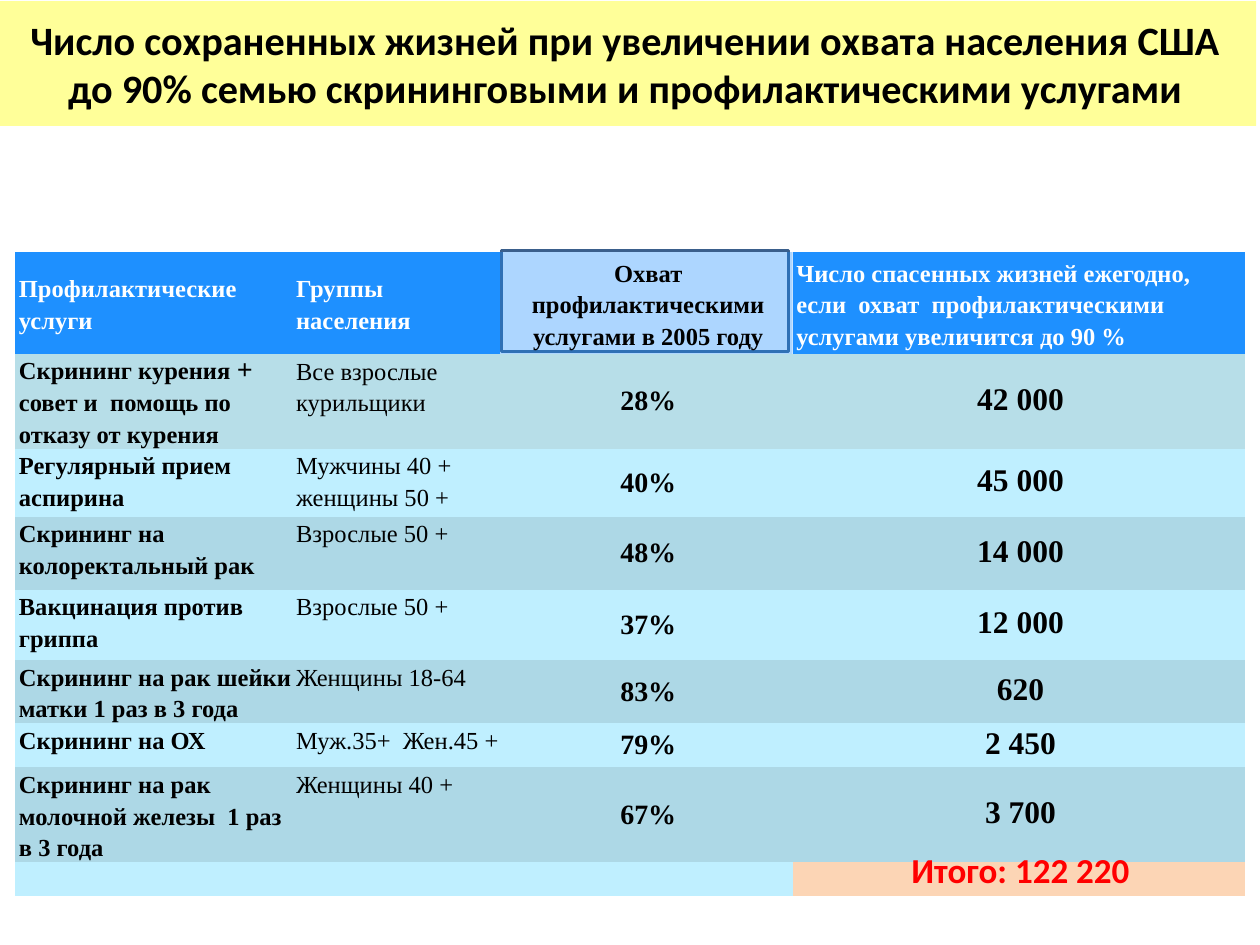
from dataclasses import dataclass
from typing import NamedTuple

from lxml.etree import SubElement
from pptx import Presentation
from pptx.dml.color import RGBColor
from pptx.enum.shapes import MSO_SHAPE
from pptx.enum.text import MSO_ANCHOR, PP_ALIGN
from pptx.oxml.ns import qn
from pptx.util import Inches, Pt


@dataclass(frozen=True)
class Theme:
    heading_font: str = "Calibri"
    table_font: str = "Times New Roman"
    title_size: float = 23
    label_size: float = 14
    percent_size: float = 16
    lives_size: float = 18
    total_size: float = 20
    empty_size: float = 10
    black: str = "000000"
    white: str = "FFFFFF"
    red: str = "FF0000"
    title_fill: str = "FFFF99"
    header_fill: str = "1E90FF"
    first_row_fill: str = "B7DEE8"
    dark_row_fill: str = "ADD8E6"
    light_row_fill: str = "BFEFFF"
    total_fill: str = "FCD5B5"
    frame_line: str = "3A5F8C"


THEME = Theme()
NO_STYLE_NO_GRID = "{2D5ABB26-0587-4C30-8999-92F81FD0307C}"


class Service(NamedTuple):
    name: str
    group: str
    coverage: str
    lives: str


class CellStyle(NamedTuple):
    size: float
    bold: bool = True
    color: str = THEME.black
    align: PP_ALIGN = PP_ALIGN.LEFT
    anchor: MSO_ANCHOR = MSO_ANCHOR.MIDDLE
    font: str = THEME.table_font


TITLE = ("Число сохраненных жизней при увеличении охвата населения США "
         "до 90% семью скрининговыми и профилактическими услугами")
HEADERS = Service(
    "Профилактические услуги", "Группы населения",
    "Охват профилактическими услугами в 2005 году",
    "Число спасенных жизней ежегодно, если  охват  профилактическими  "
    "услугами увеличится до 90 %")
SERVICES = [
    Service("Cкрининг курения + совет и  помощь по отказу от курения",
            "Все взрослые курильщики", "28%", "42 000"),
    Service("Регулярный прием  аспирина", "Мужчины 40 + женщины 50 +", "40%", "45 000"),
    Service("Скрининг на колоректальный рак", "Взрослые 50 +", "48%", "14 000"),
    Service("Вакцинация против гриппа", "Взрослые 50 +", "37%", "12 000"),
    Service("Скрининг на рак шейки матки 1 раз в 3 года", "Женщины 18-64", "83%", "620"),
    Service("Cкрининг на ОХ", "Муж.35+  Жен.45 +", "79%", "2 450"),
    Service("Cкрининг на рак молочной железы  1 раз в 3 года",
            "Женщины 40 +", "67%", "3 700"),
]
TOTAL = "Итого: 122 220"
COLUMN_WIDTHS = [2.2, 1.65, 2.32, 3.59]
ROW_HEIGHTS = [0.81, 0.75, 0.54, 0.58, 0.56, 0.5, 0.35, 0.75, 0.27]

HEADER = CellStyle(THEME.label_size, color=THEME.white)
HEADER_STYLES = [HEADER, HEADER,
                 HEADER._replace(color=THEME.black, align=PP_ALIGN.CENTER), HEADER]
NAME = CellStyle(THEME.label_size, anchor=MSO_ANCHOR.TOP)
SERVICE_STYLES = [
    NAME, NAME._replace(bold=False),
    CellStyle(THEME.percent_size, align=PP_ALIGN.CENTER),
    CellStyle(THEME.lives_size, align=PP_ALIGN.CENTER),
]
TOTAL_STYLE = CellStyle(THEME.total_size, color=THEME.red, align=PP_ALIGN.CENTER,
                        anchor=MSO_ANCHOR.TOP, font=THEME.heading_font)
EMPTY = NAME._replace(size=THEME.empty_size)


def apply(target, values: dict) -> None:
    for name, value in values.items():
        setattr(target, name, value)


def paint(target, color: str) -> None:
    target.fill.solid()
    target.fill.fore_color.rgb = RGBColor.from_string(color)


def format_font(font, style: CellStyle) -> None:
    apply(font, {"name": style.font, "size": Pt(style.size), "bold": style.bold})
    font.color.rgb = RGBColor.from_string(style.color)


def add_title(slide) -> None:
    title = slide.shapes.title
    apply(title, {"left": Inches(-0.03), "top": Inches(0.01),
                  "width": Inches(10), "height": Inches(0.99)})
    paint(title, THEME.title_fill)
    apply(title.text_frame, {"text": TITLE, "word_wrap": True,
                             "vertical_anchor": MSO_ANCHOR.MIDDLE})
    paragraph = title.text_frame.paragraphs[0]
    paragraph.alignment = PP_ALIGN.CENTER
    format_font(paragraph.runs[0].font,
                CellStyle(THEME.title_size, font=THEME.heading_font))


def add_header_frame(slide) -> None:
    """Outline that shows around and through the translucent coverage header."""
    shape = slide.shapes.add_shape(MSO_SHAPE.RECTANGLE, Inches(3.98), Inches(1.99),
                                   Inches(2.28), Inches(0.8))
    shape.shadow.inherit = False
    paint(shape, THEME.white)
    shape.line.color.rgb = RGBColor.from_string(THEME.frame_line)
    shape.line.width = Pt(2)


def fill_cell(cell, text: str, style: CellStyle, color: str) -> None:
    paint(cell, color)
    apply(cell, {"margin_left": Inches(0.03), "margin_right": 0, "margin_top": 0,
                 "margin_bottom": 0, "vertical_anchor": style.anchor})
    paragraph = cell.text_frame.paragraphs[0]
    apply(paragraph, {"alignment": style.align, "line_spacing": Pt(18),
                      "space_before": Pt(12), "space_after": Pt(12)})
    if not text:
        SubElement(paragraph._p, qn("a:endParaRPr"), sz=str(int(style.size * 100)))
        return
    before, plus, after = text.partition("+ совет")
    parts = [(before, style.size)]
    if plus:
        parts += [("+", THEME.percent_size), (" совет" + after, style.size)]
    for part, size in parts:
        run = paragraph.add_run()
        run.text = part
        format_font(run.font, style._replace(size=size))


def make_translucent(cell, percent: int) -> None:
    color = cell._tc.tcPr.find(qn("a:solidFill"))[0]
    SubElement(color, qn("a:alpha"), val=str(percent * 1000))


def row_color(index: int) -> str:
    if index == 0:
        return THEME.first_row_fill
    return THEME.light_row_fill if index % 2 else THEME.dark_row_fill


def add_services_table(slide) -> None:
    table = slide.shapes.add_table(
        len(ROW_HEIGHTS), len(COLUMN_WIDTHS), Inches(0.12), Inches(2),
        Inches(sum(COLUMN_WIDTHS)), Inches(sum(ROW_HEIGHTS))).table
    apply(table, {"first_row": False, "horz_banding": False})
    table._tbl.tblPr.find(qn("a:tableStyleId")).text = NO_STYLE_NO_GRID
    for column, width in zip(table.columns, COLUMN_WIDTHS):
        column.width = Inches(width)
    for row, height in zip(table.rows, ROW_HEIGHTS):
        row.height = Inches(height)

    rows = [(HEADERS, HEADER_STYLES, [THEME.header_fill] * 4)]
    rows += [(service, SERVICE_STYLES, [row_color(index)] * 4)
             for index, service in enumerate(SERVICES)]
    rows.append((Service("", "", "", TOTAL), [EMPTY] * 3 + [TOTAL_STYLE],
                 [THEME.light_row_fill] * 3 + [THEME.total_fill]))
    for row, (texts, styles, colors) in zip(table.rows, rows):
        for cell, text, style, color in zip(row.cells, texts, styles, colors):
            fill_cell(cell, text, style, color)
    make_translucent(table.cell(0, 2), 36)


def main() -> None:
    presentation = Presentation()
    apply(presentation, {"slide_width": Inches(10), "slide_height": Inches(7.5)})
    slide = presentation.slides.add_slide(presentation.slide_layouts[5])
    add_title(slide)
    add_header_frame(slide)
    add_services_table(slide)
    presentation.save("out.pptx")


if __name__ == "__main__":
    main()
